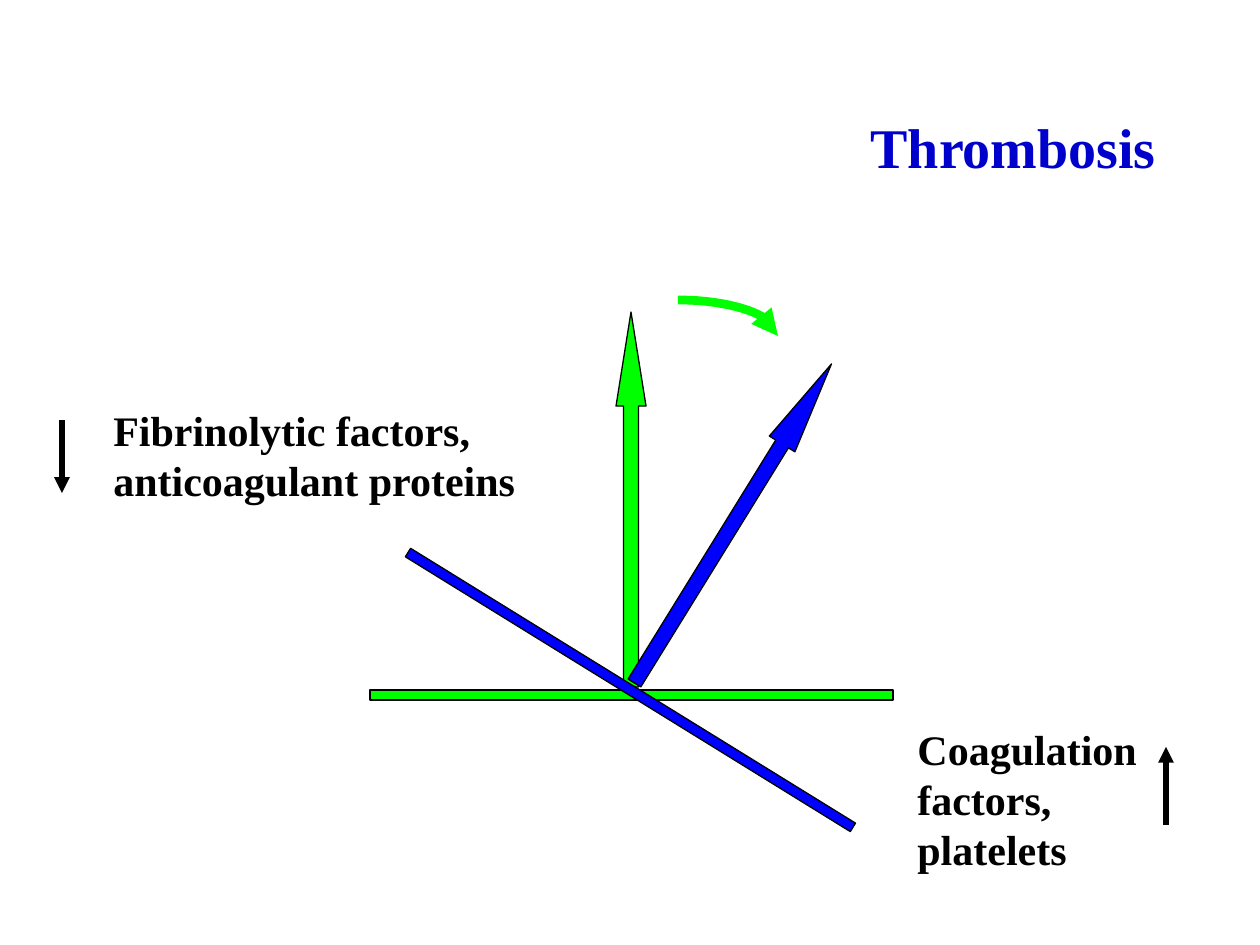
"""Build the thrombosis balance slide."""
from math import cos, pi, sin
from pptx import Presentation
from pptx import util as u
from pptx.dml.color import RGBColor
from pptx.enum import shapes, text
from pptx.oxml import ns
from lxml import etree

PX = u.Inches(1) / 126
HUES = {"green": "00FF00", "blue": "0000FF", "title": "0000CC", "black": "000000"}


def px(*nums):
    return [u.Emu(round(n * PX)) for n in nums]


def stroke(shape, hue, width):
    shape.line.color.rgb = RGBColor.from_string(HUES[hue])
    shape.line.width = u.Pt(width)
    line = shape._element.spPr.find(ns.qn("a:ln"))
    etree.SubElement(line, ns.qn("a:tailEnd"), type="triangle")


deck = Presentation()
deck.slide_width, deck.slide_height = u.Inches(10), u.Inches(7.5)
slide = deck.slides.add_slide(deck.slide_layouts[5])
tree = slide.shapes

kinds = shapes.MSO_SHAPE
parts = [
    (kinds.UP_ARROW, (616, 312, 30, 375), "green", 0),
    (kinds.RECTANGLE, (370, 690, 523, 10), "green", 0),
    (kinds.UP_ARROW, (718, 336, 30, 375), "blue", 31.7),
    (kinds.RECTANGLE, (369, 685, 523, 10), "blue", 31.7),
]
for kind, box, hue, turn in parts:
    part = tree.add_shape(kind, *px(*box))
    part.rotation = turn
    part.shadow.inherit = False
    part.fill.solid()
    part.fill.fore_color.rgb = RGBColor.from_string(HUES[hue])
    part.line.color.rgb = RGBColor.from_string(HUES["black"])
    part.line.width = u.Pt(0.75)
    if kind == kinds.UP_ARROW:
        part.adjustments[0] = 0.5
        part.adjustments[1] = 3.135

title = tree.title
title.left, title.top, title.width, title.height = px(858, 106, 311, 79)
labels = [
    (title, "Thrombosis", 32, "title"),
    (tree.add_textbox(*px(101, 398, 428, 113)),
     "Fibrinolytic factors,\nanticoagulant proteins", 24, "black"),
    (tree.add_textbox(*px(905, 717, 256, 164)),
     "Coagulation\nfactors,\nplatelets", 24, "black"),
]
for label, words, size, hue in labels:
    frame = label.text_frame
    frame.text = words
    frame.word_wrap = False
    frame.auto_size = text.MSO_AUTO_SIZE.SHAPE_TO_FIT_TEXT
    frame.vertical_anchor = text.MSO_ANCHOR.TOP
    for para in frame.paragraphs:
        para.alignment = text.PP_ALIGN.LEFT
        font = para.runs[0].font
        font.name, font.size, font.bold = "Times New Roman", u.Pt(size), True
        font.color.rgb = RGBColor.from_string(HUES[hue])

steps = 24
angles = [pi / 2 * n / steps for n in range(steps + 1)]
points = [px(678 + 100 * sin(a), 336 - 36 * cos(a)) for a in angles]
path = tree.build_freeform(*points[0])
path.add_line_segments(points[1:], close=False)
curve = path.convert_to_shape()
curve.fill.background()
curve.shadow.inherit = False
stroke(curve, "green", 5)

for ends in [(62, 420, 62, 493), (1166, 825, 1166, 747)]:
    arrow = tree.add_connector(shapes.MSO_CONNECTOR.STRAIGHT, *px(*ends))
    stroke(arrow, "black", 3)
    etree.SubElement(arrow._element.spPr, ns.qn("a:effectLst"))

deck.save("out.pptx")
